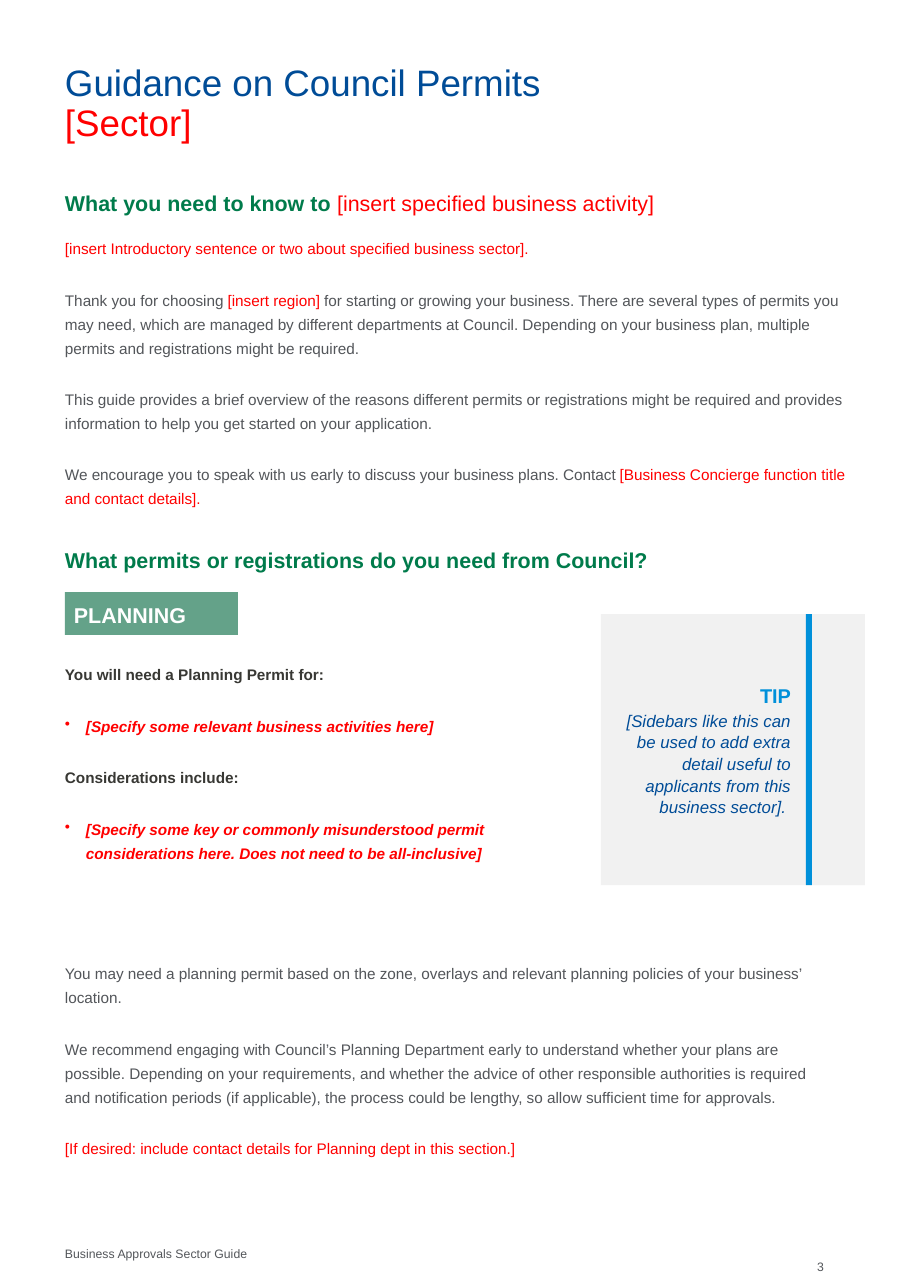
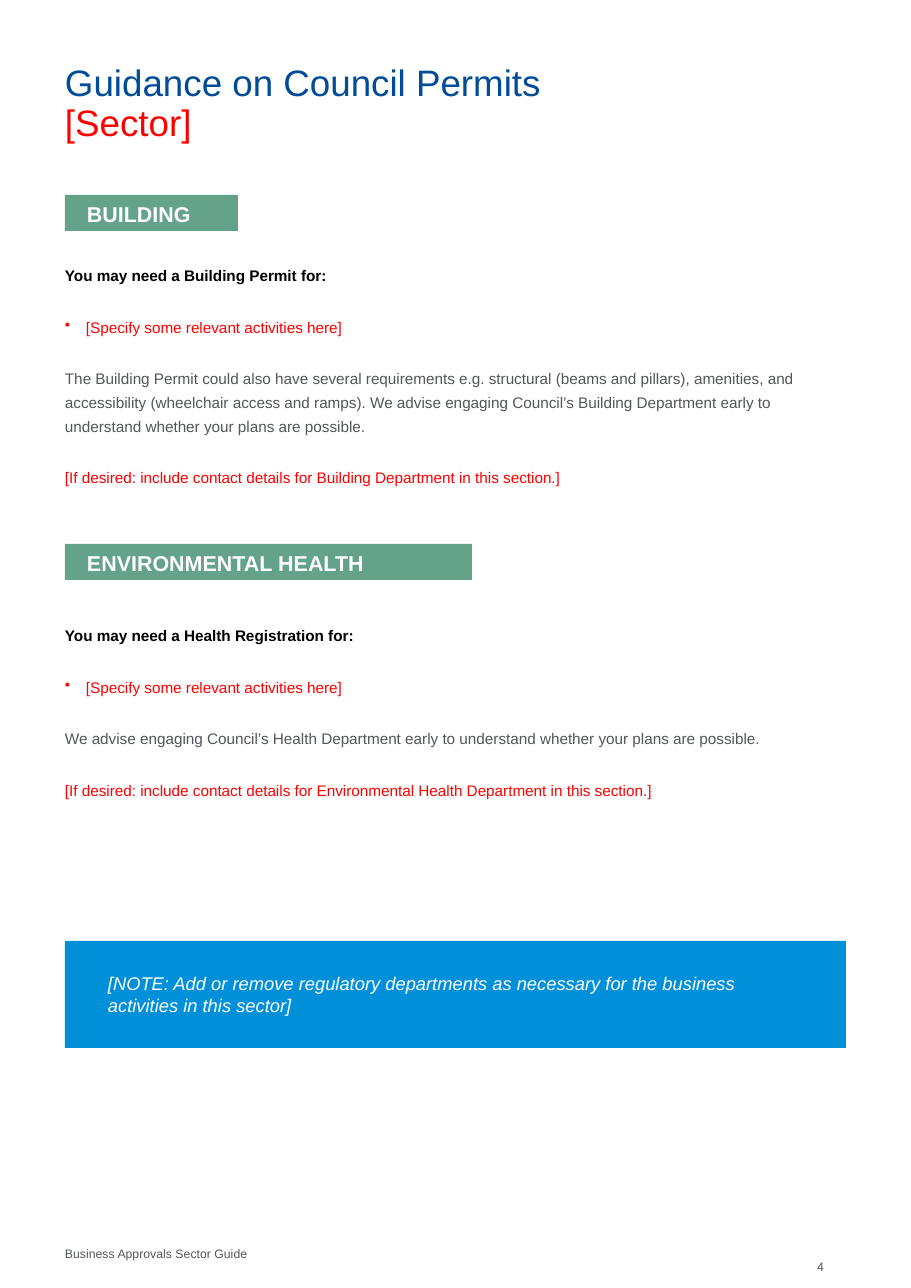
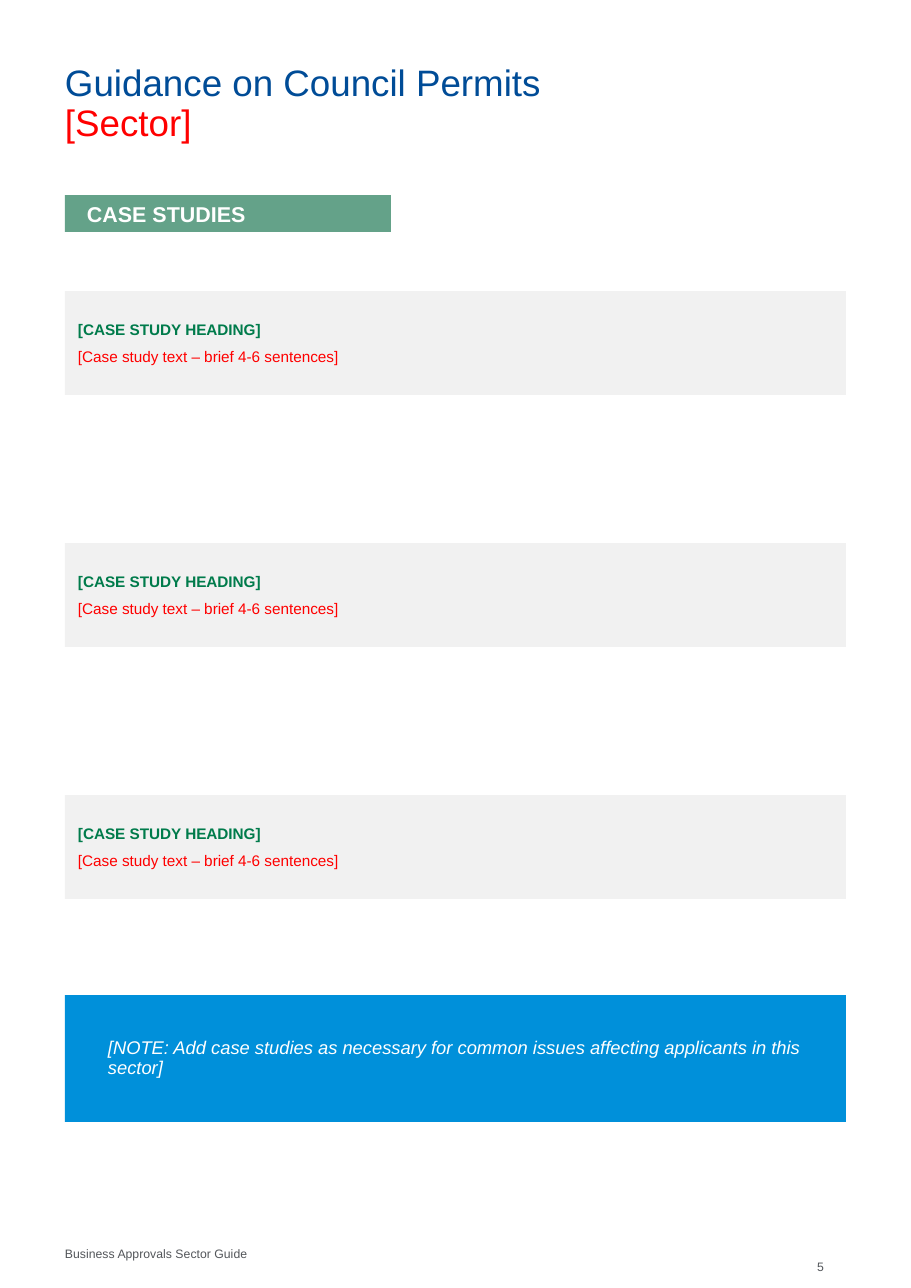
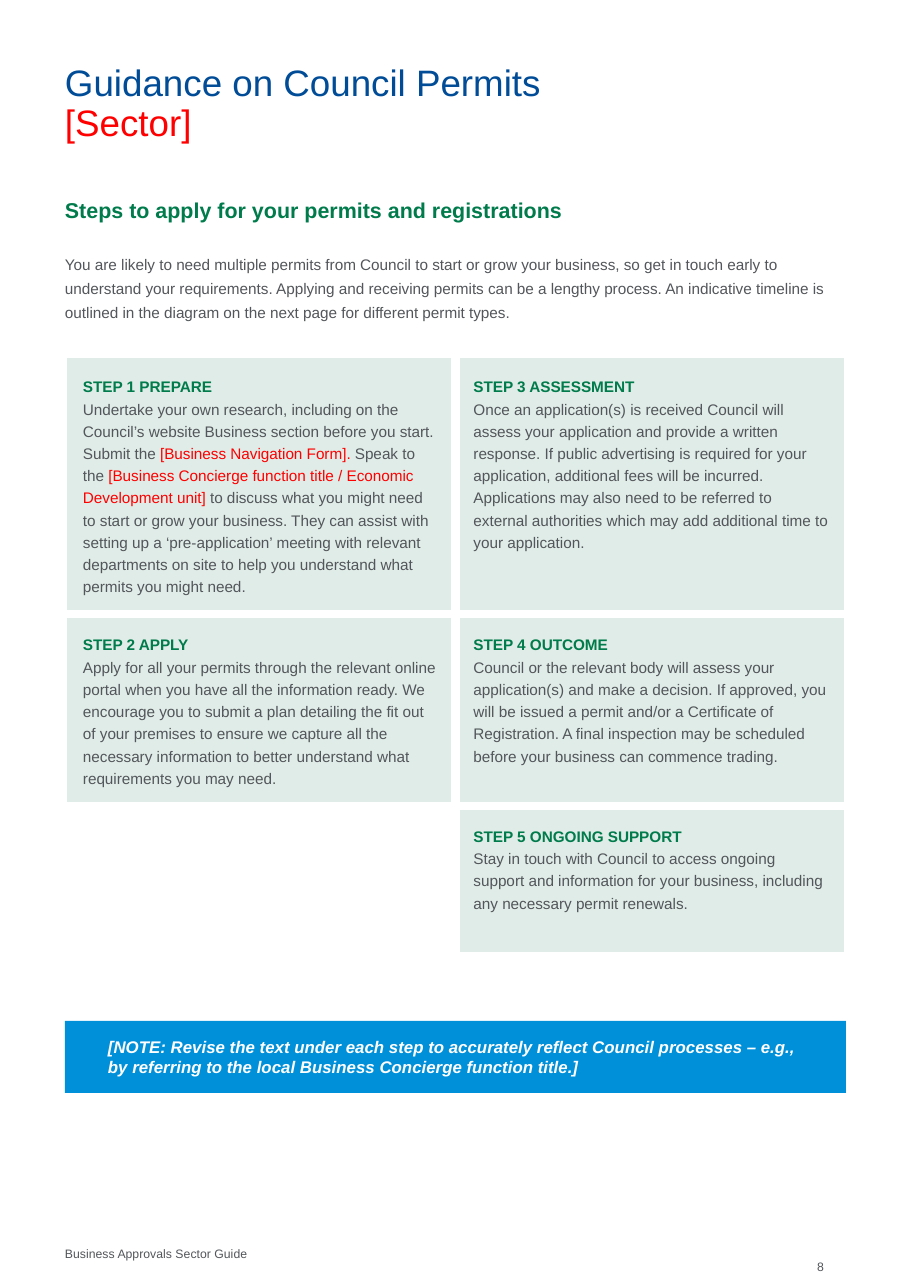
from lxml import etree
from pptx import Presentation
from pptx import util as u
from pptx.dml.color import RGBColor
from pptx.enum import shapes, text
from pptx.oxml.ns import qn

EMU_PER_PX = 8298
PAGE_WIDTH, PAGE_HEIGHT = 911, 1288
LEFT, WIDTH = 65, 781
TOP = 195

NAVY, BLUE, GREEN, SAGE = "004C97", "0090DA", "007B4B", "64A289"
GREY, CHARCOAL, BLACK, WHITE = "53565A", "383834", "000000", "FFFFFF"
RED, PANEL_GREY, PALE_GREY = "FF0000", "E4E4E4", "F2F2F2"

BODY = dict(size=10, color=GREY, spacing=1.3, before=12, after=6)
PROMPT = BODY | dict(color=RED)
BULLET = PROMPT | dict(bullet=True)
STRONG_BULLET = BULLET | dict(bold=True, italic=True)
STRONG = BODY | dict(color=BLACK, bold=True)
SUBHEAD = BODY | dict(color=CHARCOAL, bold=True)
HEADING = dict(size=14, color=GREEN, bold=True)
BAND = dict(size=14, color=WHITE, bold=True, spacing=1.07, after=6)
CASE_HEADING = dict(size=10, color=GREEN, bold=True, after=6)
CASE_TEXT = dict(size=10, color=RED, after=6)
STEP_HEADING = dict(size=10, color=GREEN, bold=True, spacing=1.3)
STEP_TEXT = dict(size=10, color=GREY, spacing=1.3)
NOTE = dict(size=12, color=WHITE, italic=True)
SMALL = dict(size=8, color=GREY)
LOOSE = (0, 6, 11, 6)


def px(length):
    return u.Emu(length * EMU_PER_PX)


def rgb(color):
    return RGBColor.from_string(color)


def set_fill(fill, properties, color, opacity=100):
    """Fill solidly; properties is the XML element that owns the fill."""
    fill.solid()
    fill.fore_color.rgb = rgb(color)
    if opacity < 100:
        solid = properties.find(qn("a:solidFill"))
        etree.SubElement(solid[0], qn("a:alpha"), val=str(opacity * 1000))


def set_borders(cell, widths):
    """Draw white cell borders; widths in points go left, right, top, bottom."""
    properties = cell._tc.get_or_add_tcPr()
    for index, (side, width) in enumerate(zip("LRTB", widths)):
        line = etree.Element(qn(f"a:ln{side}"), w=str(u.Pt(width)))
        solid = etree.SubElement(line, qn("a:solidFill"))
        etree.SubElement(solid, qn("a:srgbClr"), val=WHITE)
        properties.insert(index, line)


class Guide:
    """The guide's style and the slide being filled."""

    font = "Arial"

    def __init__(self):
        self.presentation = Presentation()
        self.presentation.slide_width = px(PAGE_WIDTH)
        self.presentation.slide_height = px(PAGE_HEIGHT)
        self.slide = None

    def new_slide(self, number):
        self.slide = self.presentation.slides.add_slide(self.presentation.slide_layouts[5])
        title = self.slide.shapes.title
        title.left, title.top, title.width, title.height = map(px, (LEFT, 65, WIDTH, 130))
        style = dict(size=24, spacing=0.9)
        self.set_text(title.text_frame, [("Guidance on Council Permits", style | dict(color=NAVY)),
                                         ("[Sector]", style | dict(color=RED))])
        self.text_box((LEFT, 1238, 455, 26),
                      [("Business Approvals Sector Guide", SMALL | dict(spacing=1.3))], middle=True)
        self.text_box((641, 1245, 205, 43), [(str(number), SMALL | dict(right=True))],
                      insets=(0, 0, 22, 0), middle=True)

    def set_text(self, frame, lines, insets=(0, 0, 0, 0), middle=False):
        frame.word_wrap = True
        frame.auto_size = text.MSO_AUTO_SIZE.NONE
        frame.vertical_anchor = text.MSO_ANCHOR.MIDDLE if middle else text.MSO_ANCHOR.TOP
        (frame.margin_left, frame.margin_top,
         frame.margin_right, frame.margin_bottom) = map(px, insets)
        self.paragraphs(frame, lines)

    def paragraphs(self, frame, lines):
        for index, (words, style) in enumerate(lines):
            paragraph = frame.add_paragraph() if index else frame.paragraphs[0]
            self.paragraph(paragraph, words, **style)

    def paragraph(self, paragraph, words, size, color, bold=False, italic=False, spacing=1.0,
                  before=0, after=0, right=False, bullet=False):
        """Set one paragraph; every second part between | marks is a red prompt."""
        paragraph.alignment = text.PP_ALIGN.RIGHT if right else text.PP_ALIGN.LEFT
        paragraph.line_spacing = spacing
        paragraph.space_before = u.Pt(before)
        paragraph.space_after = u.Pt(after)
        if bullet:
            properties = paragraph._p.get_or_add_pPr()
            properties.set("marL", str(px(21)))
            properties.set("indent", str(px(-21)))
            etree.SubElement(properties, qn("a:buChar"), char="•")
        for index, part in enumerate(words.split("|")):
            is_prompt = index % 2 == 1
            run = paragraph.add_run()
            run.text = part
            run.font.name = self.font
            run.font.size = u.Pt(size)
            run.font.bold = bold and not is_prompt
            run.font.italic = italic
            run.font.color.rgb = rgb(RED if is_prompt else color)

    def text_box(self, box, lines, **layout):
        shape = self.slide.shapes.add_textbox(*map(px, box))
        self.set_text(shape.text_frame, lines, **layout)

    def panel(self, box, color, lines=(), insets=(0, 0, 0, 0), opacity=100):
        shape = self.slide.shapes.add_shape(shapes.MSO_SHAPE.RECTANGLE, *map(px, box))
        shape.shadow.inherit = False
        shape.line.fill.background()
        set_fill(shape.fill, shape.element.spPr, color, opacity)
        if lines:
            self.set_text(shape.text_frame, lines, insets, middle=True)

    def band(self, words, top, width, height=36, inset=22):
        self.panel((LEFT, top, width, height), SAGE, [(words, BAND)], (inset, 0, inset, 0))

    def note(self, words, top, height, **changes):
        self.panel((LEFT, top, WIDTH, height), BLUE, [(words, NOTE | changes)], (43, 0, 43, 0))

    def sidebar(self, left, top, height, heading, words):
        style = dict(right=True, spacing=1.07, after=1)
        self.panel((left, top, 264, height), PANEL_GREY,
                   [(heading, style | dict(size=13, color=BLUE, bold=True)),
                    (words, style | dict(size=11, color=NAVY, italic=True))],
                   (11, 6, 74, 6), opacity=50)
        self.panel((left + 211, top, 53, height), PALE_GREY, opacity=50)
        self.panel((left + 205, top, 6, height), BLUE)

    def step_table(self, top, row_heights, rows):
        """Lay out (heading, words) pairs two to a row; None leaves a cell clear."""
        frame = self.slide.shapes.add_table(len(rows), 2, px(LEFT), px(top),
                                            px(WIDTH), px(sum(row_heights)))
        table = frame.table
        table.first_row = table.horz_banding = False
        last = len(rows) - 1
        for row, (height, steps) in enumerate(zip(row_heights, rows)):
            table.rows[row].height = px(height)
            for column, step in enumerate(steps):
                cell = table.cell(row, column)
                if step:
                    set_fill(cell.fill, cell._tc.get_or_add_tcPr(), SAGE, 20)
                    heading, words = step
                    self.paragraphs(cell.text_frame, [(heading, STEP_HEADING), (words, STEP_TEXT)])
                else:
                    cell.fill.background()
                cell.margin_left = cell.margin_right = px(18)
                cell.margin_top = cell.margin_bottom = px(18)
                outer = (column == 0, column == 1, row == 0, row == last)
                set_borders(cell, [3 if edge else 6 for edge in outer])


def planning_slide(guide):
    guide.new_slide(3)
    guide.text_box((LEFT, TOP, WIDTH, 397), [
        ("What you need to know to |[insert specified business activity]",
         HEADING | dict(spacing=u.Pt(13.5))),
        ("[insert Introductory sentence or two about specified business sector].", PROMPT),
        ("Thank you for choosing |[insert region] |for starting or growing your business. There are "
         "several types of permits you may need, which are managed by different departments at "
         "Council. Depending on your business plan, multiple permits and registrations might be "
         "required.", BODY),
        ("This guide provides a brief overview of the reasons different permits or registrations "
         "might be required and provides information to help you get started on your application.",
         BODY),
        ("We encourage you to speak with us early to discuss your business plans. Contact "
         "|[Business Concierge function title and contact details].", BODY),
    ])
    guide.text_box((LEFT, 539, WIDTH, 60), [
        ("What permits or registrations do you need from Council?", HEADING | dict(spacing=1.3))])
    guide.band("PLANNING", 592, 173, height=43, inset=9)
    guide.text_box((LEFT, 660, 444, 241), [
        ("You will need a Planning Permit for:", SUBHEAD),
        ("[Specify some relevant business activities here]", STRONG_BULLET),
        ("Considerations include:", SUBHEAD),
        ("[Specify some key or commonly misunderstood permit considerations here. Does not need to "
         "be all-inclusive]", STRONG_BULLET),
    ])
    guide.sidebar(601, 614, 271, "TIP", "[Sidebars like this can be used to add extra detail "
                  "useful to applicants from this business sector]. ")
    guide.text_box((LEFT, 953, WIDTH, 209), [
        ("You may need a planning permit based on the zone, overlays and relevant planning policies "
         "of your business’ location.", BODY),
        ("We recommend engaging with Council’s Planning Department early to understand whether your "
         "plans are possible. Depending on your requirements, and whether the advice of other "
         "responsible authorities is required and notification periods (if applicable), the process "
         "could be lengthy, so allow sufficient time for approvals.", BODY),
        ("[If desired: include contact details for Planning dept in this section.]", PROMPT),
    ], insets=LOOSE)


def departments_slide(guide):
    guide.new_slide(4)
    departments = [
        ("BUILDING", 195, 173, 255, 326, "Building Permit", "Building Department",
         "The Building Permit could also have several requirements e.g. structural (beams and "
         "pillars), amenities, and accessibility (wheelchair access and ramps). We advise engaging "
         "Council’s Building Department early to understand whether your plans are possible."),
        ("ENVIRONMENTAL HEALTH", 544, 407, 615, 217, "Health Registration",
         "Environmental Health Department",
         "We advise engaging Council’s Health Department early to understand whether your plans are "
         "possible."),
    ]
    for name, band_top, band_width, top, height, permit, department, advice in departments:
        guide.band(name, band_top, band_width)
        guide.text_box((LEFT, top, WIDTH, height), [
            (f"You may need a {permit} for:", STRONG),
            ("[Specify some relevant activities here]", BULLET),
            (advice, BODY),
            (f"[If desired: include contact details for {department} in this section.]", PROMPT),
        ], insets=LOOSE)
    guide.note("[NOTE: Add or remove regulatory departments as necessary for the business "
               "activities in this sector]", 941, 107)


def case_studies_slide(guide):
    guide.new_slide(5)
    guide.band("CASE STUDIES", TOP, 326, height=37)
    for index in range(3):
        guide.panel((LEFT, 291 + 252 * index, WIDTH, 104), PANEL_GREY,
                    [("[CASE STUDY HEADING]", CASE_HEADING),
                     ("[Case study text – brief 4-6 sentences]", CASE_TEXT)],
                    (13, 0, 13, 0), opacity=50)
    guide.note("[NOTE: Add case studies as necessary for common issues affecting applicants in "
               "this sector]", 995, 127, spacing=0.9)


def steps_slide(guide):
    guide.new_slide(8)
    guide.text_box((LEFT, TOP, WIDTH, 130), [
        ("Steps to apply for your permits and registrations",
         HEADING | dict(spacing=1.07, before=2, after=6)),
        ("You are likely to need multiple permits from Council to start or grow your business, so "
         "get in touch early to understand your requirements. Applying and receiving permits can be "
         "a lengthy process. An indicative timeline is outlined in the diagram on the next page for "
         "different permit types.", BODY),
    ])
    prepare = ("STEP 1 PREPARE",
               "Undertake your own research, including on the Council’s website Business section "
               "before you start. Submit the |[Business Navigation Form]. |Speak to the |[Business "
               "Concierge function title / Economic Development unit] |to discuss what you might "
               "need to start or grow your business. They can assist with setting up a "
               "‘pre-application’ meeting with relevant departments on site to help you understand "
               "what permits you might need.")
    application = ("STEP 2 APPLY",
                   "Apply for all your permits through the relevant online portal when you have all "
                   "the information ready. We encourage you to submit a plan detailing the fit out "
                   "of your premises to ensure we capture all the necessary information to better "
                   "understand what requirements you may need.")
    assessment = ("STEP 3 ASSESSMENT",
                  "Once an application(s) is received Council will assess your application and "
                  "provide a written response. If public advertising is required for your "
                  "application, additional fees will be incurred. Applications may also need to be "
                  "referred to external authorities which may add additional time to your "
                  "application.")
    outcome = ("STEP 4 OUTCOME",
               "Council or the relevant body will assess your application(s) and make a decision. "
               "If approved, you will be issued a permit and/or a Certificate of Registration. A "
               "final inspection may be scheduled before your business can commence trading.")
    support = ("STEP 5 ONGOING SUPPORT",
               "Stay in touch with Council to access ongoing support and information for your "
               "business, including any necessary permit renewals.")
    guide.step_table(356, (257, 190, 148),
                     [(prepare, assessment), (application, outcome), (None, support)])
    guide.note("[NOTE: Revise the text under each step to accurately reflect Council processes – "
               "e.g., by referring to the local Business Concierge function title.]",
               1021, 72, size=11, bold=True)


def main():
    guide = Guide()
    for build in (planning_slide, departments_slide, case_studies_slide, steps_slide):
        build(guide)
    guide.presentation.save("out.pptx")


if __name__ == "__main__":
    main()
